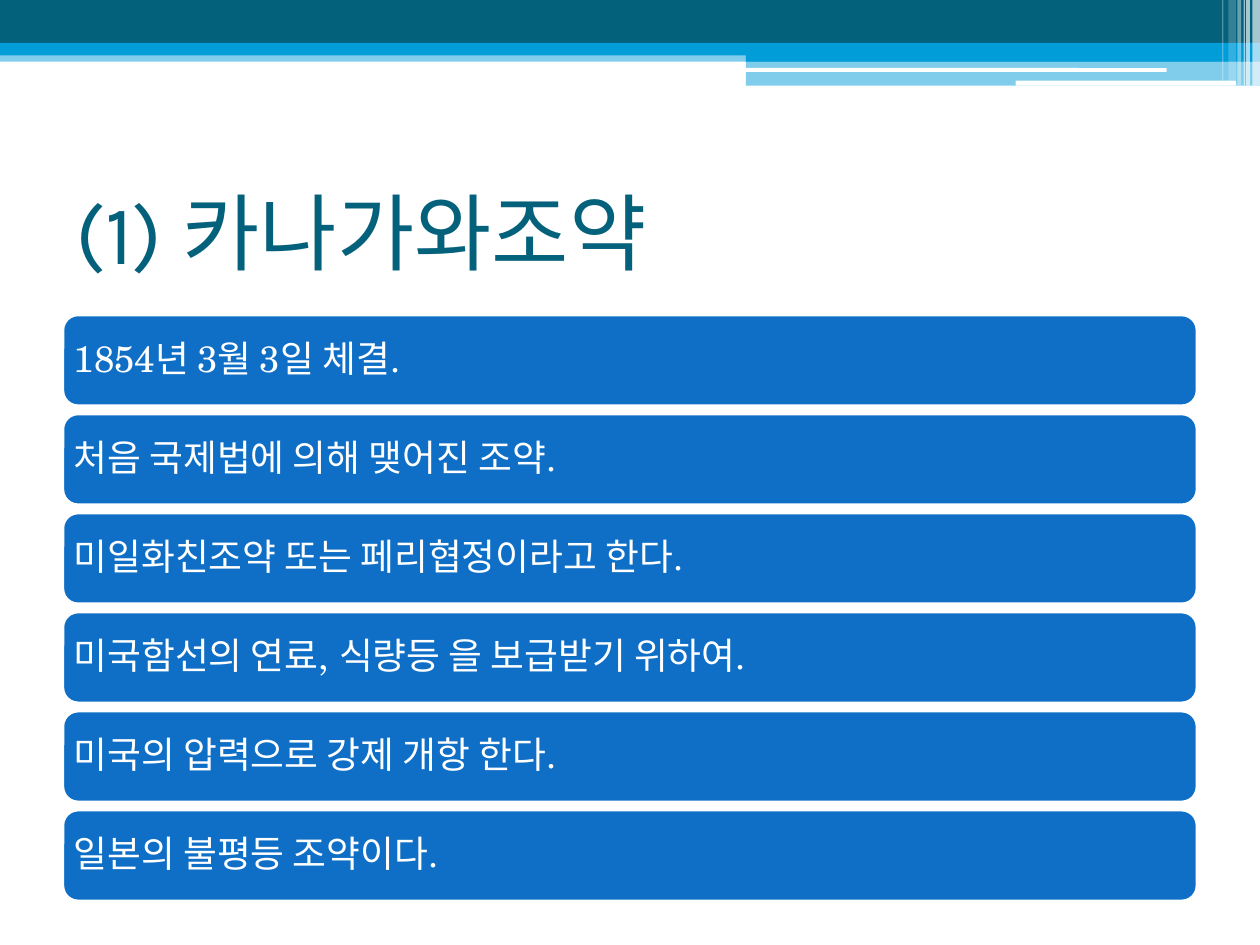
from dataclasses import dataclass

from lxml import etree
from pptx import Presentation
from pptx.dml.color import RGBColor
from pptx.enum.shapes import MSO_SHAPE
from pptx.enum.text import MSO_ANCHOR, PP_ALIGN
from pptx.oxml.ns import qn
from pptx.util import Inches, Pt

RECT = MSO_SHAPE.RECTANGLE
ROUNDED = MSO_SHAPE.ROUNDED_RECTANGLE
MIDDLE = MSO_ANCHOR.MIDDLE
LEFT = PP_ALIGN.LEFT


@dataclass(frozen=True)
class Theme:
    teal: str = "04617B"
    sky: str = "009DD9"
    blue: str = "0F6FC6"
    white: str = "FFFFFF"
    title_font: str = "Karla"
    body_font: str = "TeX Gyre Schola"
    title_size: float = 48
    body_size: float = 21
    outline: float = 1.5


@dataclass(frozen=True)
class Block:
    left: float
    top: float
    width: float
    height: float
    color: str
    opacity: int = 100
    kind: int = RECT
    outline: str = ""


THEME = Theme()

HEADER = [
    Block(0, 0.4, 10, 0.09, THEME.sky, 50),
    Block(0, 0, 10, 0.34, THEME.teal),
    Block(0, 0.34, 10, 0.1, THEME.sky),
    Block(5.92, 0.39, 4.08, 0.1, THEME.sky),
    Block(5.92, 0.48, 4.08, 0.2, THEME.sky, 50),
    Block(5.91, 0.54, 3.35, 0.03, THEME.white, kind=ROUNDED),
    Block(8.06, 0.64, 1.75, 0.04, THEME.white, kind=ROUNDED),
    Block(9.94, 0, 0.06, 0.68, THEME.white, 65),
    Block(9.89, 0, 0.03, 0.68, THEME.white, 65),
    Block(9.87, 0, 0.01, 0.68, THEME.white, 60),
    Block(9.82, 0, 0.03, 0.68, THEME.white, 40),
    Block(9.75, 0, 0.06, 0.64, THEME.white, 20),
    Block(9.7, 0, 0.01, 0.64, THEME.white, 30),
]

TITLE = "(1) 카나가와조약"
TREATY_FACTS = [
    "1854년 3월 3일 체결.",
    "처음 국제법에 의해 맺어진 조약.",
    "미일화친조약 또는 페리협정이라고 한다.",
    "미국함선의 연료, 식량등 을 보급받기 위하여.",
    "미국의 압력으로 강제 개항 한다.",
    "일본의 불평등 조약이다.",
]
MARGIN, CONTENT_WIDTH = 0.5, 9
FACTS_TOP, FACTS_BOTTOM, BAR_HEIGHT = 2.5, 7.15, 0.72


def draw_block(slide, block: Block):
    shape = slide.shapes.add_shape(
        block.kind, Inches(block.left), Inches(block.top),
        Inches(block.width), Inches(block.height))
    shape.shadow.inherit = False
    shape.fill.solid()
    shape.fill.fore_color.rgb = RGBColor.from_string(block.color)
    if block.opacity < 100:
        color = shape.fill._xPr.find(qn("a:solidFill"))[0]
        etree.SubElement(color, qn("a:alpha"), val=str(block.opacity * 1000))
    if block.outline:
        shape.line.color.rgb = RGBColor.from_string(block.outline)
        shape.line.width = Pt(THEME.outline)
    else:
        shape.line.fill.background()
    return shape


def write_text(shape, text: str, *, font: str, size: float, color: str,
               inset: float = 0.1, line_spacing: float = 1.0) -> None:
    frame = shape.text_frame
    frame.word_wrap = True
    frame.vertical_anchor = MIDDLE
    frame.margin_left = frame.margin_right = Inches(inset)
    paragraph = frame.paragraphs[0]
    paragraph.alignment = LEFT
    paragraph.line_spacing = line_spacing
    run = paragraph.add_run()
    run.text = text
    run.font.name = font
    run.font.size = Pt(size)
    run.font.color.rgb = RGBColor.from_string(color)


def draw_facts(slide, facts: list[str]) -> None:
    """Stack one bar per fact, evenly spread over the content area."""
    pitch = (FACTS_BOTTOM - BAR_HEIGHT - FACTS_TOP) / (len(facts) - 1)
    for index, fact in enumerate(facts):
        bar = draw_block(slide, Block(
            MARGIN, FACTS_TOP + index * pitch, CONTENT_WIDTH, BAR_HEIGHT,
            THEME.blue, kind=ROUNDED, outline=THEME.white))
        # The rounded corners already push the text in a little.
        write_text(bar, fact, font=THEME.body_font, size=THEME.body_size,
                   color=THEME.white, inset=0.05, line_spacing=0.9)


def main() -> None:
    deck = Presentation()
    deck.slide_width, deck.slide_height = Inches(10), Inches(7.5)
    slide = deck.slides.add_slide(deck.slide_layouts[6])
    for block in HEADER:
        draw_block(slide, block)
    title = slide.shapes.add_textbox(
        Inches(MARGIN), Inches(1.25), Inches(CONTENT_WIDTH), Inches(1.17))
    write_text(title, TITLE, font=THEME.title_font, size=THEME.title_size,
               color=THEME.teal)
    draw_facts(slide, TREATY_FACTS)
    deck.save("out.pptx")


if __name__ == "__main__":
    main()
